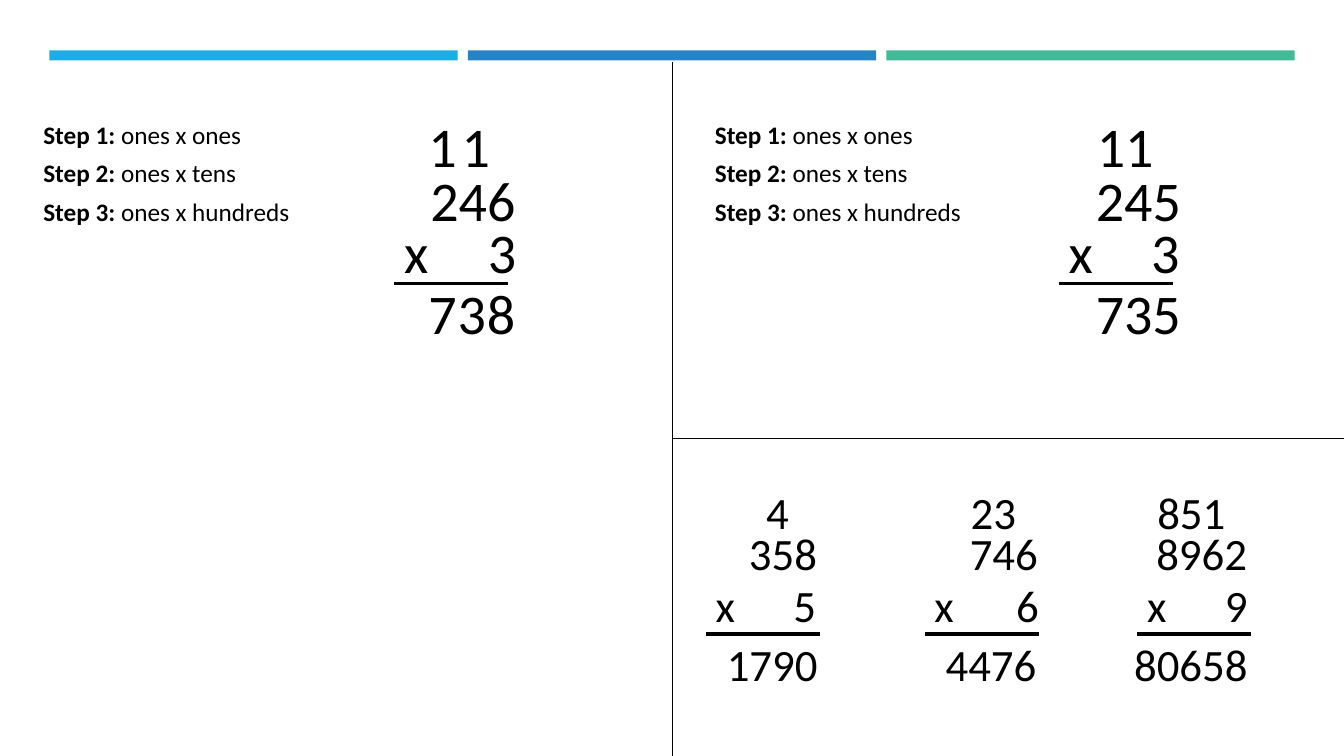
"""Builds a slide of worked column multiplications, with the steps listed beside them."""
from dataclasses import dataclass

import pptx
import pptx.dml.color
import pptx.enum.shapes
import pptx.enum.text
import pptx.util
from lxml import etree

EMU_PER_PX = 9144
FONT = "Calibri"
COLORS = {"cyan": "1CADE4", "blue": "2683C6", "green": "42BA97", "ink": "000000"}
STEPS = [("Step 1: ", "ones x ones"), ("Step 2: ", "ones x tens"),
         ("Step 3: ", "ones x hundreds")]
SIGN_WIDTH = 76
RULE_LENGTH = 113


@dataclass(frozen=True)
class Scale:
    size: int
    height: int
    indent: int
    tops: dict[str, int]
    rule: int


@dataclass(frozen=True)
class Term:
    text: str
    row: str
    left: int
    width: int
    indented: bool = False


@dataclass(frozen=True)
class Problem:
    left: int
    scale: Scale
    terms: tuple[Term, ...]


LARGE = Scale(40, 77, 25, {"carry": 106, "top": 159, "factor": 211, "product": 271}, 281)
SMALL = Scale(32, 64, 20, {"carry": 476, "top": 517, "factor": 568, "product": 627}, 629)

PROBLEMS = [
    Problem(391, LARGE, (
        Term("1", "carry", 415, 56), Term("1", "carry", 423, 76, True),
        Term("246", "top", 417, 138), Term("3", "factor", 449, 113, True),
        Term("7", "product", 415, 56), Term("3", "product", 444, 56),
        Term("8", "product", 473, 56))),
    Problem(1050, LARGE, (
        Term("11", "carry", 1053, 138, True), Term("245", "top", 1077, 138),
        Term("3", "factor", 1107, 113, True), Term("735", "product", 1077, 127))),
    Problem(700, SMALL, (
        Term("4", "carry", 730, 87, True), Term("358", "top", 733, 132),
        Term("5", "factor", 757, 113, True), Term("1790", "product", 711, 132))),
    Problem(917, SMALL, (
        Term("23", "carry", 933, 87, True), Term("746", "top", 952, 127),
        Term("6", "factor", 978, 113, True), Term("4476", "product", 928, 139))),
    Problem(1128, SMALL, (
        Term("851", "carry", 1118, 119, True), Term("8962", "top", 1137, 156),
        Term("9", "factor", 1185, 113, True), Term("80658", "product", 1115, 150))),
]


def px(n: int) -> pptx.util.Emu:
    return pptx.util.Emu(n * EMU_PER_PX)


def rgb(name: str) -> pptx.dml.color.RGBColor:
    return pptx.dml.color.RGBColor.from_string(COLORS[name])


def style(p, size: int, indent: int = 0) -> None:
    p.font.name = FONT
    p.font.size = pptx.util.Pt(size)
    p.font.color.rgb = rgb("ink")
    pPr = p._p.get_or_add_pPr()
    pPr.set("marL", str(px(indent)))
    pPr.set("indent", "0")


def add_bar(slide, left: int, color: str) -> None:
    sp = slide.shapes.add_shape(pptx.enum.shapes.MSO_SHAPE.RECTANGLE,
                                px(left), px(50), px(405), px(10))
    sp.shadow.inherit = False
    sp.fill.solid()
    sp.fill.fore_color.rgb = rgb(color)
    sp.line.fill.background()


def add_line(slide, x1: int, y1: int, x2: int, y2: int, width: float) -> None:
    line = slide.shapes.add_connector(pptx.enum.shapes.MSO_CONNECTOR.STRAIGHT,
                                      px(x1), px(y1), px(x2), px(y2))
    line.line.color.rgb = rgb("ink")
    line.line.width = pptx.util.Pt(width)
    etree.SubElement(line._element.spPr, pptx.oxml.ns.qn("a:effectLst"))


def add_term(slide, term: Term, scale: Scale) -> None:
    sp = slide.shapes.add_textbox(px(term.left), px(scale.tops[term.row]),
                                  px(term.width), px(scale.height))
    tf = sp.text_frame
    tf.word_wrap = True
    tf.auto_size = pptx.enum.text.MSO_AUTO_SIZE.SHAPE_TO_FIT_TEXT
    p = tf.paragraphs[0]
    p.text = term.text
    style(p, scale.size, scale.indent if term.indented else 0)


def add_problem(slide, problem: Problem) -> None:
    sign = Term("x", "factor", problem.left, SIGN_WIDTH)
    for term in (*problem.terms, sign):
        add_term(slide, term, problem.scale)
    y = problem.scale.rule
    add_line(slide, problem.left, y, problem.left + RULE_LENGTH, y, 2.25)


def fill_steps(sp, left: int) -> None:
    sp.left, sp.top, sp.width, sp.height = px(left), px(113), px(279), px(118)
    tf = sp.text_frame
    tf.word_wrap = True
    tf.auto_size = pptx.enum.text.MSO_AUTO_SIZE.NONE
    for i, (label, rule) in enumerate(STEPS):
        p = tf.paragraphs[0] if i == 0 else tf.add_paragraph()
        r = p.add_run()
        r.text = label
        r.font.bold = True
        p.add_run().text = rule
        p.space_before = pptx.util.Pt(0)
        p.space_after = pptx.util.Pt(6)
        style(p, 18)
        pPr = p._p.get_or_add_pPr()
        pPr.insert_element_before(pPr.makeelement(pptx.oxml.ns.qn("a:buNone"), {}),
                                  "a:tabLst", "a:defRPr", "a:extLst")


def main() -> None:
    prs = pptx.Presentation()
    prs.slide_width, prs.slide_height = px(1333), px(750)
    slide = prs.slides.add_slide(prs.slide_layouts.get_by_name("Two Content"))
    title = slide.shapes.title._element
    title.getparent().remove(title)
    for sp, left in zip(list(slide.placeholders), (33, 699)):
        fill_steps(sp, left)
    for i, color in enumerate(("cyan", "blue", "green")):
        add_bar(slide, 49 + 415 * i, color)
    add_line(slide, 667, 62, 667, 750, 1)
    add_line(slide, 667, 435, 1333, 435, 1)
    for problem in PROBLEMS:
        add_problem(slide, problem)
    prs.save("out.pptx")


if __name__ == "__main__":
    main()
